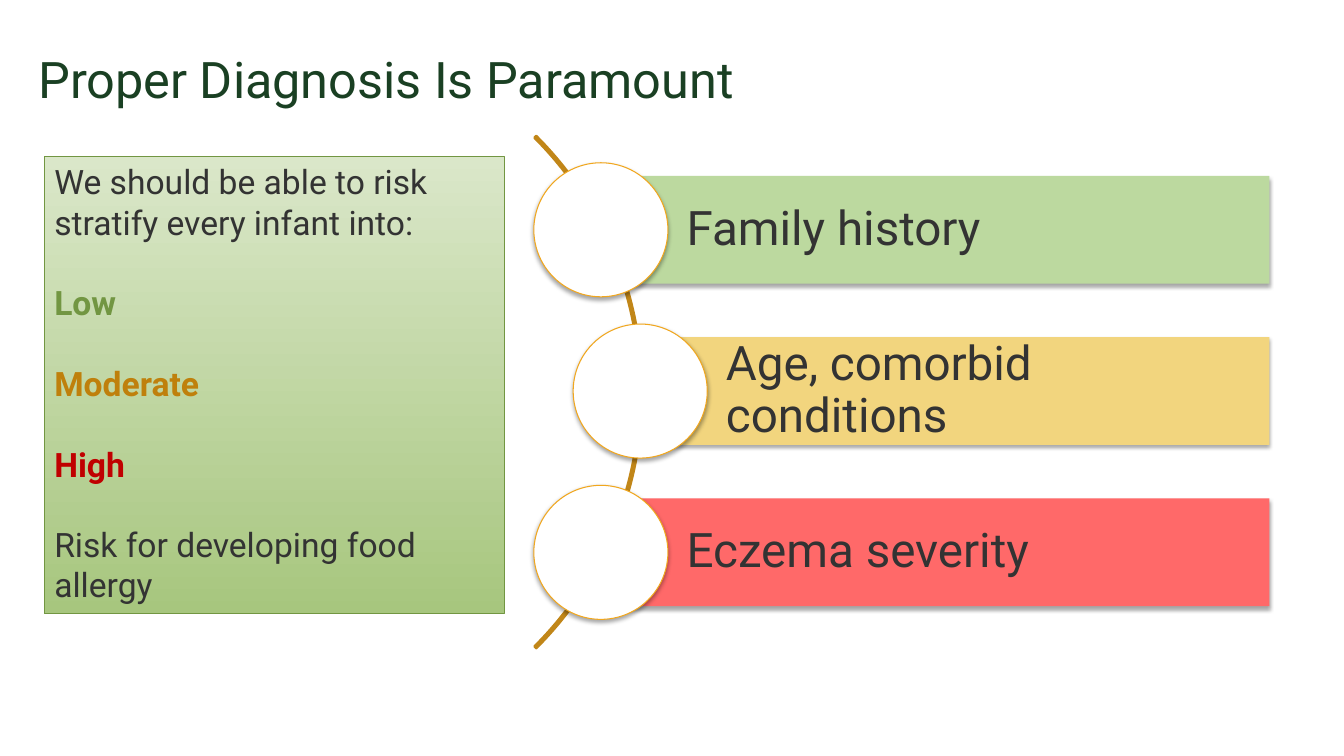
from lxml import etree
from pptx import Presentation
from pptx.dml.color import RGBColor
from pptx.enum.shapes import MSO_SHAPE
from pptx.enum.text import MSO_ANCHOR, MSO_AUTO_SIZE, PP_ALIGN
from pptx.oxml.ns import qn
from pptx.util import Inches, Pt

RECTANGLE, OVAL, BLOCK_ARC = MSO_SHAPE.RECTANGLE, MSO_SHAPE.OVAL, MSO_SHAPE.BLOCK_ARC
TOP, MIDDLE, LEFT = MSO_ANCHOR.TOP, MSO_ANCHOR.MIDDLE, PP_ALIGN.LEFT
TITLE_ONLY = 5
FONT = "Roboto"
COLORS = {
    "title": "1A4023", "text": "333333", "white": "FFFFFF", "shadow": "000000",
    "arc": "C18618", "ring": "F1A71E",
    "low": "729642", "moderate": "BF800C", "high": "C00000",
    "panel_top": "DAE7C9", "panel_bottom": "A7C67E",
    "green": "BCD99F", "yellow": "F2D57E", "red": "FF6969",
}

FIRST_ROW, ROW_PITCH = 2.28, 1.6
BAR_RIGHT, BAR_HEIGHT = 12.59, 1.07
CIRCLE = 1.33
FACTORS = [
    ("Family history", "green", 5.96),
    ("Age, comorbid conditions", "yellow", 6.35),
    ("Eczema severity", "red", 5.96),
]
RISK_LINES = [
    ("We should be able to risk stratify every infant into:", "text", False),
    ("Low", "low", True),
    ("Moderate", "moderate", True),
    ("High", "high", True),
    ("Risk for developing food allergy", "text", False),
]


def color(name):
    return RGBColor.from_string(COLORS[name])


def set_font(paragraph, size, name, bold=False):
    font = paragraph.font
    font.name, font.size, font.bold = FONT, Pt(size), bold
    font.color.rgb = color(name)
    paragraph.alignment = LEFT


def add_shape(slide, kind, left, top, width, height, fill=None, line=None, line_width=0.75):
    shape = slide.shapes.add_shape(
        kind, Inches(left), Inches(top), Inches(width), Inches(height))
    shape.shadow.inherit = False
    if fill:
        shape.fill.solid()
        shape.fill.fore_color.rgb = color(fill)
    else:
        shape.fill.background()
    if line:
        shape.line.color.rgb = color(line)
        shape.line.width = Pt(line_width)
    else:
        shape.line.fill.background()
    return shape


def add_shadow(shape):
    effects = shape.element.spPr.find(qn("a:effectLst"))
    shadow = etree.SubElement(
        effects, qn("a:outerShdw"), blurRad=str(Pt(3.1)), dist=str(Pt(1.8)),
        dir="5400000", rotWithShape="0")
    tint = etree.SubElement(shadow, qn("a:srgbClr"), val=COLORS["shadow"])
    etree.SubElement(tint, qn("a:alpha"), val="35000")


def add_title(slide, text):
    title = slide.shapes.title
    title.left, title.top = Inches(0.28), Inches(0.19)
    title.width, title.height = Inches(12.78), Inches(1.25)
    title.text_frame.text = text
    title.text_frame.vertical_anchor = MIDDLE
    paragraph = title.text_frame.paragraphs[0]
    paragraph.line_spacing = 0.9
    set_font(paragraph, 36, "title")


def add_arc(slide):
    arc = add_shape(slide, BLOCK_ARC, -0.81, 0.3, 7.18, 7.18, line="arc", line_width=2)
    for index, value in enumerate((189, 27, 0.003)):
        arc.adjustments[index] = value


def add_factor(slide, row, text, fill, left):
    """Draw one labelled bar with a circle centred on its left end."""
    center = FIRST_ROW + row * ROW_PITCH
    bar = add_shape(slide, RECTANGLE, left, center - BAR_HEIGHT / 2,
                    BAR_RIGHT - left, BAR_HEIGHT, fill)
    add_shadow(bar)
    frame = bar.text_frame
    frame.margin_left = Inches(0.85)
    frame.margin_top = frame.margin_right = frame.margin_bottom = Inches(0.09)
    frame.word_wrap = True
    frame.vertical_anchor = MIDDLE
    frame.text = text
    frame.paragraphs[0].line_spacing = 0.9
    set_font(frame.paragraphs[0], 34, "text")
    circle = add_shape(slide, OVAL, left - CIRCLE / 2, center - CIRCLE / 2,
                       CIRCLE, CIRCLE, "white", "ring")
    add_shadow(circle)


def add_risk_panel(slide):
    panel = add_shape(slide, RECTANGLE, 0.44, 1.55, 4.56, 4.54, line="low")
    panel.fill.gradient()
    panel.fill.gradient_angle = 270
    for stop, name in zip(panel.fill.gradient_stops, ("panel_top", "panel_bottom")):
        stop.color.rgb = color(name)
    frame = panel.text_frame
    frame.word_wrap = True
    frame.auto_size = MSO_AUTO_SIZE.SHAPE_TO_FIT_TEXT
    frame.vertical_anchor = TOP
    frame.text = "\n".join(text for text, _, _ in RISK_LINES)
    for index, (_, name, bold) in enumerate(RISK_LINES):
        paragraph = frame.paragraphs[index]
        if index:
            paragraph.space_before = Pt(28.8)
        set_font(paragraph, 24, name, bold)


def main():
    presentation = Presentation()
    presentation.slide_width, presentation.slide_height = Inches(13.33), Inches(7.5)
    slide = presentation.slides.add_slide(presentation.slide_layouts[TITLE_ONLY])
    add_title(slide, "Proper Diagnosis Is Paramount")
    add_arc(slide)
    for row, factor in enumerate(FACTORS):
        add_factor(slide, row, *factor)
    add_risk_panel(slide)
    presentation.save("out.pptx")


if __name__ == "__main__":
    main()
